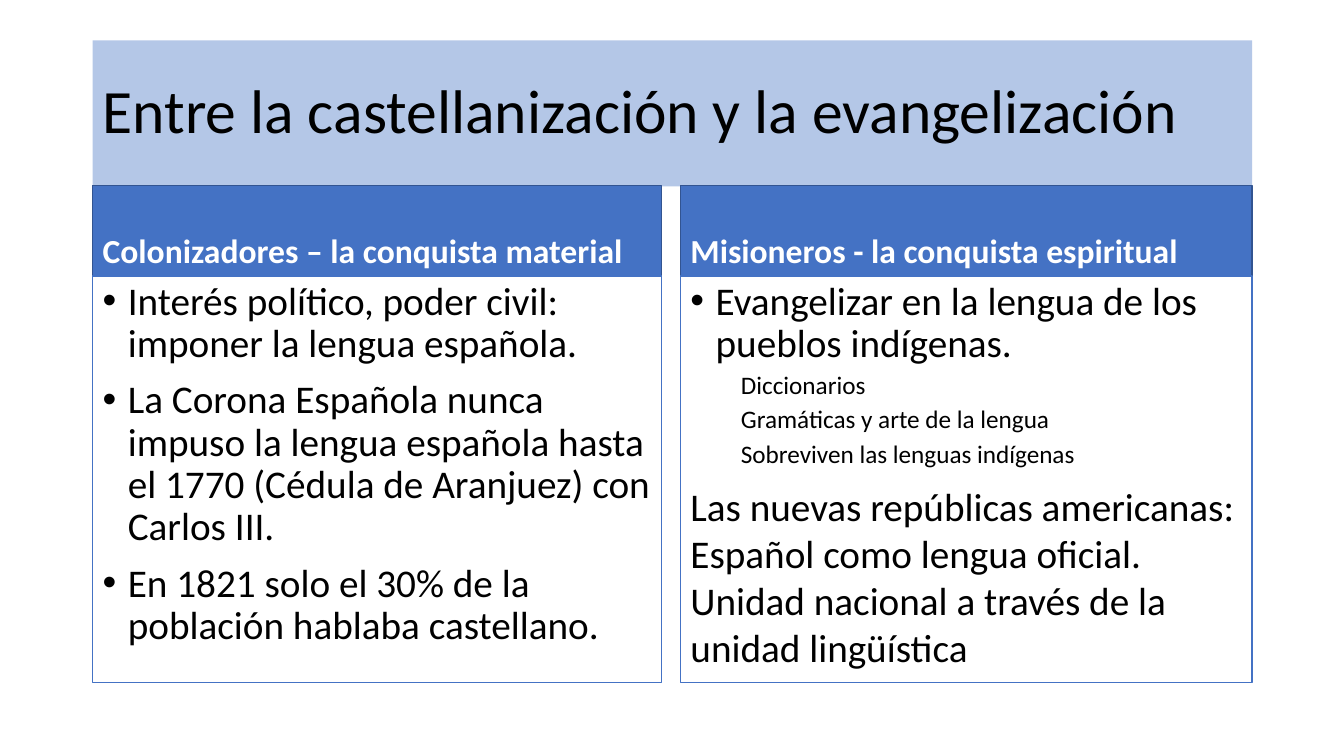
"""Builds a slide that compares settlers and missionaries in two columns."""
from lxml.etree import SubElement
from pptx import Presentation
from pptx.dml.color import RGBColor
from pptx.enum.shapes import MSO_SHAPE
from pptx.enum.text import MSO_ANCHOR, PP_ALIGN
from pptx.oxml.ns import qn
from pptx.util import Inches, Pt


def color(code):
    return RGBColor.from_string(code)


def apply(target, values):
    for name, value in values.items():
        setattr(target, name, value)


class Deck:
    font = "Calibri"
    blue = "4472C4"
    edge = "325491"
    pale = "B4C7E7"
    white = "FFFFFF"
    black = "000000"
    kinds = {
        "title": dict(size=44, before=0, line=0.9),
        "head": dict(size=24, before=10, line=0.9, bold=True, ink=white),
        "point": dict(size=28, before=10, line=0.9, left=0.25, hang=-0.25, mark="•"),
        "item": dict(size=18, before=5, line=0.9, left=0.5, level=1),
        "plain": dict(size=28, before=10, line=1.0),
    }

    def __init__(self):
        self.show = Presentation()
        apply(self.show, {"slide_width": Inches(13.33), "slide_height": Inches(7.5)})
        self.slide = self.show.slides.add_slide(self.show.slide_layouts[6])

    def panel(self, area, fill, edge, anchor, lines):
        box = self.slide.shapes.add_shape(MSO_SHAPE.RECTANGLE, *map(Inches, area))
        box.shadow.inherit = False
        box.fill.solid()
        box.fill.fore_color.rgb = color(fill)
        if edge:
            box.line.color.rgb = color(edge)
            box.line.width = Pt(1)
        else:
            box.line.fill.background()
        frame = box.text_frame
        apply(frame, {"word_wrap": True, "vertical_anchor": anchor})
        for index, (kind, text) in enumerate(lines):
            para = frame.add_paragraph() if index else frame.paragraphs[0]
            self.label(para, text, self.kinds[kind], index == 0)

    def label(self, para, text, kind, first):
        apply(para, {
            "alignment": PP_ALIGN.LEFT,
            "level": kind.get("level", 0),
            "line_spacing": kind["line"],
            "space_before": Pt(0 if first else kind["before"]),
        })
        props = para._p.get_or_add_pPr()
        props.set("marL", str(Inches(kind.get("left", 0))))
        props.set("indent", str(Inches(kind.get("hang", 0))))
        if "mark" in kind:
            SubElement(props, qn("a:buFont"), typeface="Arial")
            SubElement(props, qn("a:buChar"), char=kind["mark"])
        else:
            SubElement(props, qn("a:buNone"))
        run = para.add_run()
        run.text = text
        apply(run.font, {
            "name": self.font,
            "size": Pt(kind["size"]),
            "bold": kind.get("bold", False),
        })
        run.font.color.rgb = color(kind.get("ink", self.black))

    def title(self, text):
        area = (0.92, 0.4, 11.5, 1.45)
        self.panel(area, self.pale, None, MSO_ANCHOR.MIDDLE, [("title", text)])

    def column(self, left, width, head, lines):
        top, tall = 1.84, 0.9
        self.panel((left, top, width, tall), self.blue, self.edge,
                   MSO_ANCHOR.BOTTOM, [("head", head)])
        self.panel((left, top + tall, width, 4.03), self.white, self.blue,
                   MSO_ANCHOR.TOP, lines)


def main():
    deck = Deck()
    deck.title("Entre la castellanización y la evangelización")
    deck.column(0.92, 5.64, "Colonizadores – la conquista material", [
        ("point", "Interés político, poder civil: imponer la lengua española."),
        ("point", "La Corona Española nunca impuso la lengua española hasta "
                  "el 1770 (Cédula de Aranjuez) con Carlos III."),
        ("point", "En 1821 solo el 30% de la población hablaba castellano."),
    ])
    deck.column(6.75, 5.67, "Misioneros - la conquista espiritual", [
        ("point", "Evangelizar en la lengua de los pueblos indígenas."),
        ("item", "Diccionarios"),
        ("item", "Gramáticas y arte de la lengua"),
        ("item", "Sobreviven las lenguas indígenas"),
        ("plain", "Las nuevas repúblicas americanas: Español como lengua oficial. "
                  "Unidad nacional a través de la unidad lingüística"),
    ])
    deck.show.save("out.pptx")


if __name__ == "__main__":
    main()
